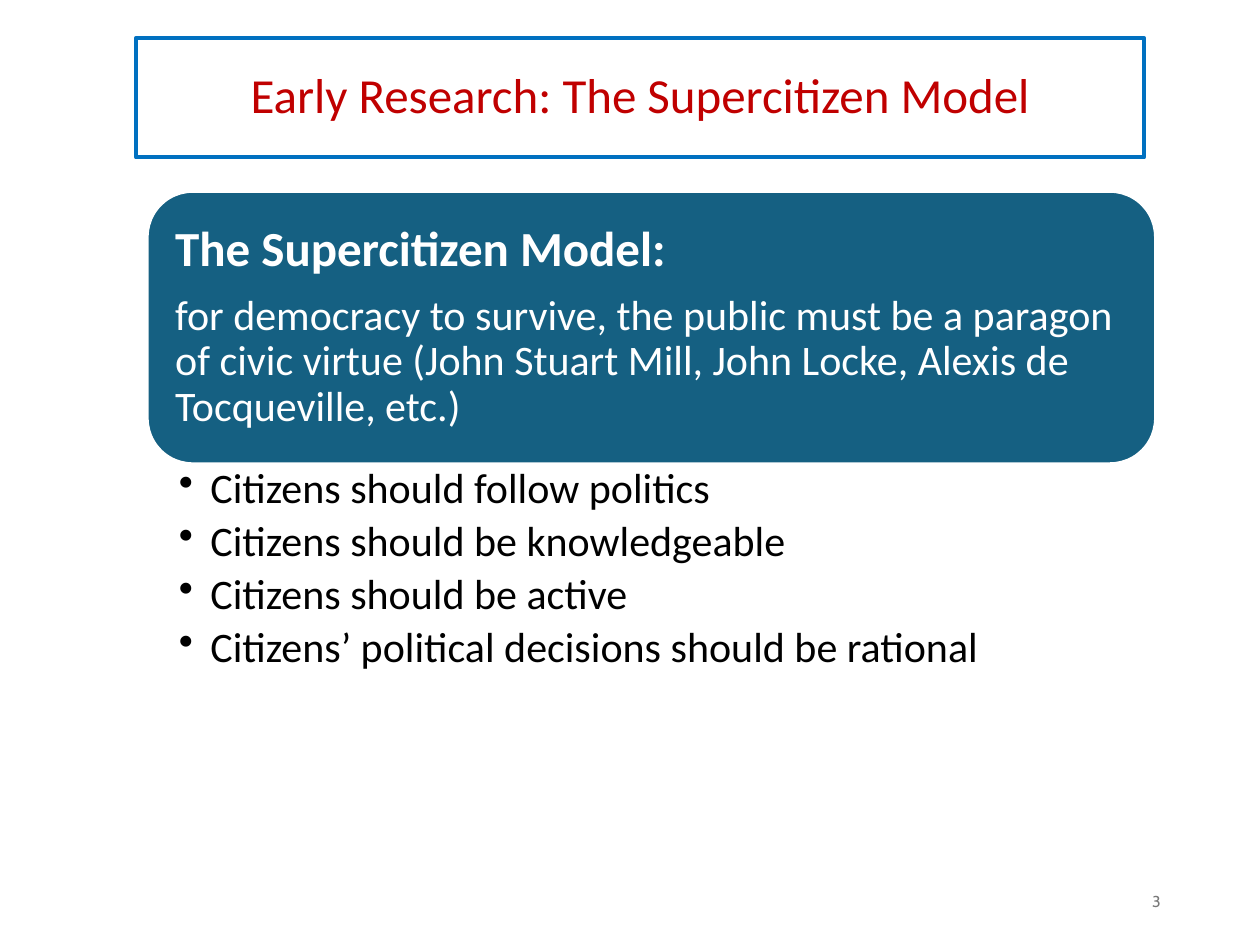
from lxml import etree
from pptx import Presentation
from pptx.dml.color import RGBColor
from pptx.enum.shapes import MSO_SHAPE
from pptx.enum.text import MSO_ANCHOR, PP_ALIGN
from pptx.oxml.ns import qn
from pptx.util import Inches, Pt

RECTANGLE = MSO_SHAPE.RECTANGLE
ROUNDED = MSO_SHAPE.ROUNDED_RECTANGLE
TOP, MIDDLE = MSO_ANCHOR.TOP, MSO_ANCHOR.MIDDLE
LEFT, CENTER, RIGHT = PP_ALIGN.LEFT, PP_ALIGN.CENTER, PP_ALIGN.RIGHT

COLORS = {
    "title": "C00000",
    "frame": "0070C0",
    "panel": "156082",
    "white": "FFFFFF",
    "black": "000000",
    "number": "797979",
}


def color(name):
    return RGBColor.from_string(COLORS[name])


def add_text(frame, text, *, size, ink, font="Calibri", bold=False, align=LEFT,
             line_spacing=0.9, after=0, bullet=False):
    """Fill the frame's empty first paragraph, or append a new one."""
    para = frame.paragraphs[0] if not frame.text else frame.add_paragraph()
    if bullet:
        properties = para._p.get_or_add_pPr()
        properties.set("marL", str(Inches(0.25)))
        properties.set("indent", str(Inches(-0.25)))
        etree.SubElement(properties, qn("a:buChar"), char="•")
    para.alignment = align
    para.line_spacing = line_spacing
    para.space_after = Pt(after)
    span = para.add_run()
    span.text = text
    span.font.name = font
    span.font.size = Pt(size)
    span.font.bold = bold
    span.font.color.rgb = color(ink)


deck = Presentation()
deck.slide_width, deck.slide_height = Inches(10), Inches(7.5)
page = deck.slides.add_slide(deck.slide_layouts[6])

# Title frame and rounded panel
title = page.shapes.add_shape(RECTANGLE, Inches(1.08), Inches(0.3), Inches(8), Inches(0.95))
title.fill.background()
title.line.color.rgb = color("frame")
title.line.width = Pt(2.25)

panel = page.shapes.add_shape(ROUNDED, Inches(1.17), Inches(1.52), Inches(8), Inches(2.16))
panel.fill.solid()
panel.fill.fore_color.rgb = color("panel")
panel.line.color.rgb = color("white")
panel.line.width = Pt(1.5)

for shape in (title, panel):
    shape.shadow.inherit = False

title.text_frame.word_wrap = True
title.text_frame.vertical_anchor = MIDDLE
add_text(title.text_frame, "Early Research: The Supercitizen Model",
         size=28, ink="title", align=CENTER)

# Text boxes: place, insets (left, top, right, bottom), anchor
frames = []
for place, insets, anchor in (
    ((1.27, 1.62, 7.79, 1.95), (0.12, 0.12, 0.12, 0.12), MIDDLE),
    ((1.17, 3.68, 8, 1.8), (0.25, 0.03, 0.19, 0.03), TOP),
    ((7.06, 6.95, 2.25, 0.4), (0.1, 0.05, 0.1, 0.05), MIDDLE),
):
    frame = page.shapes.add_textbox(*map(Inches, place)).text_frame
    frame.word_wrap = True
    frame.vertical_anchor = anchor
    frame.margin_left, frame.margin_top, frame.margin_right, frame.margin_bottom = map(Inches, insets)
    frames.append(frame)
definition, duties, number = frames

add_text(definition, "The Supercitizen Model:", size=28, ink="white", bold=True, after=9.8)
add_text(definition,
         "for democracy to survive, the public must be a paragon of civic virtue "
         "(John Stuart Mill, John Locke, Alexis de Tocqueville, etc.)",
         size=24, ink="white", after=8.4)

for duty in (
    "Citizens should follow politics",
    "Citizens should be knowledgeable",
    "Citizens should be active",
    "Citizens’ political decisions should be rational",
):
    add_text(duties, duty, size=24, ink="black", after=4.3, bullet=True)

add_text(number, "3", size=9, ink="number", font="Cabin", align=RIGHT, line_spacing=1.0)

deck.save("out.pptx")
